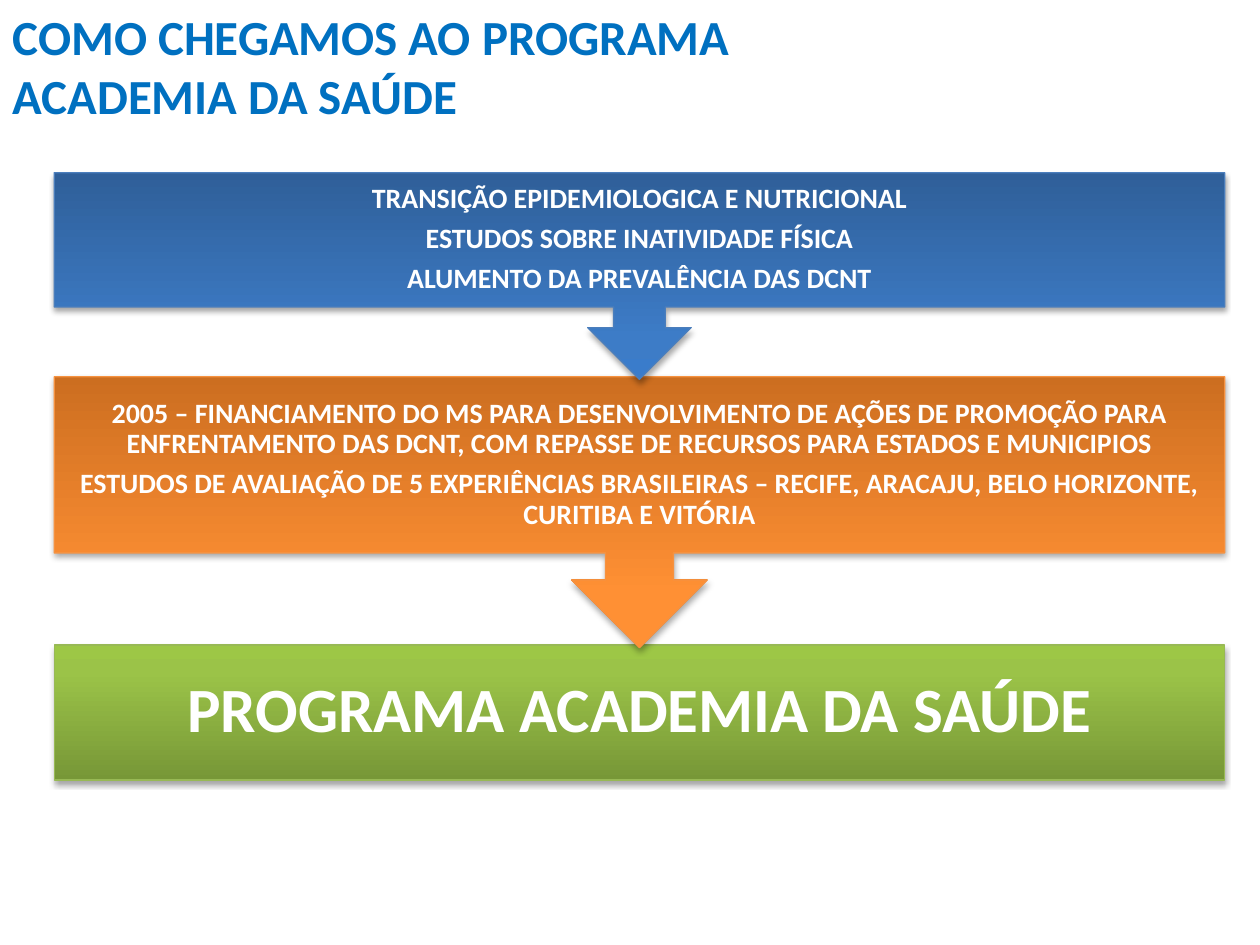
from copy import deepcopy
from dataclasses import dataclass

from lxml import etree
from pptx import Presentation
from pptx import util as u
from pptx.dml.color import RGBColor
from pptx.enum import shapes, text
from pptx.oxml.ns import qn

COLORS = {
    "title": "0070C0",
    "text": "FFFFFF",
    "shadow": "000000",
    "blue": ("2F5F99", "3D7CC7", "3A7CCB"),
    "blue_line": "4B7EBC",
    "orange": ("CC6E20", "FF9034", "FF9136"),
    "orange_line": "F69240",
    "green": ("779737", "9BC348", "9DC746"),
    "green_line": "98B955",
}
FONT = "Calibri"
GRADIENT_POSITIONS = (0, 0.8, 1)
CALLOUT_BODY = 0.65
LEFT, WIDTH = 4.3, 92.9


@dataclass(frozen=True)
class Stage:
    top: float
    height: float
    color: str
    lines: tuple[str, ...]
    size: int = 16
    inset: float = 0.12
    leads_on: bool = True


STAGES = (
    Stage(68.27, 14.27, "green", ("PROGRAMA ACADEMIA DA SAÚDE",), 36, 0.28, False),
    Stage(39.87, 28.67, "orange", (
        "2005 – FINANCIAMENTO DO MS PARA DESENVOLVIMENTO DE AÇÕES DE PROMOÇÃO PARA "
        "ENFRENTAMENTO DAS DCNT, COM REPASSE DE RECURSOS PARA ESTADOS E MUNICIPIOS",
        "ESTUDOS DE AVALIAÇÃO DE 5 EXPERIÊNCIAS BRASILEIRAS – RECIFE, ARACAJU, "
        "BELO HORIZONTE, CURITIBA E VITÓRIA",
    )),
    Stage(18.27, 21.87, "blue", (
        "TRANSIÇÃO EPIDEMIOLOGICA E NUTRICIONAL",
        "ESTUDOS SOBRE INATIVIDADE FÍSICA",
        "ALUMENTO DA PREVALÊNCIA DAS DCNT",
    )),
)

prs = Presentation()
prs.slide_width, prs.slide_height = u.Inches(10), u.Inches(7.5)


def area(left: float, top: float, width: float, height: float) -> tuple[int, ...]:
    across, down = prs.slide_width / 100, prs.slide_height / 100
    return (round(left * across), round(top * down),
            round(width * across), round(height * down))


def write_lines(frame, lines: tuple[str, ...], size: int, color: str, align) -> None:
    frame.word_wrap = True
    frame.text = "\n".join(lines)
    for paragraph in frame.paragraphs:
        paragraph.alignment = align
        font = paragraph.font
        font.name, font.size, font.bold = FONT, u.Pt(size), True
        font.color.rgb = RGBColor.from_string(color)


def fill_gradient(shape, colors: tuple[str, ...]) -> None:
    shape.fill.gradient()
    shape.fill.gradient_angle = 90
    stop_list = shape.element.spPr.find(".//" + qn("a:gsLst"))
    stop_list.append(deepcopy(stop_list[-1]))
    for stop, color, position in zip(shape.fill.gradient_stops, colors, GRADIENT_POSITIONS):
        stop.color.rgb = RGBColor.from_string(color)
        stop.position = position


def cast_shadow(shape) -> None:
    shape.shadow.inherit = False
    effects = shape.element.spPr.find(qn("a:effectLst"))
    shadow = etree.SubElement(effects, qn("a:outerShdw"), blurRad=str(u.Pt(3.1)),
                              dist=str(u.Pt(1.8)), dir="5400000", rotWithShape="0")
    tint = etree.SubElement(shadow, qn("a:srgbClr"), val=COLORS["shadow"])
    etree.SubElement(tint, qn("a:alpha"), val="35000")


def draw_stage(slide, stage: Stage) -> None:
    kind = shapes.MSO_SHAPE.UP_ARROW_CALLOUT if stage.leads_on else shapes.MSO_SHAPE.RECTANGLE
    panel = slide.shapes.add_shape(kind, *area(LEFT, stage.top, WIDTH, stage.height))
    panel.rotation = 180 if stage.leads_on else 0
    fill_gradient(panel, COLORS[stage.color])
    panel.line.color.rgb = RGBColor.from_string(COLORS[stage.color + "_line"])
    panel.line.width = u.Pt(0.75)
    cast_shadow(panel)

    body = stage.height * (CALLOUT_BODY if stage.leads_on else 1)
    frame = slide.shapes.add_textbox(*area(LEFT, stage.top, WIDTH, body)).text_frame
    frame.vertical_anchor = text.MSO_ANCHOR.MIDDLE
    frame.margin_left = frame.margin_right = u.Inches(stage.inset)
    frame.margin_top = frame.margin_bottom = u.Inches(stage.inset)
    write_lines(frame, stage.lines, stage.size, COLORS["text"], text.PP_ALIGN.CENTER)
    for paragraph in frame.paragraphs:
        paragraph.line_spacing = 0.9
        paragraph.space_after = u.Pt(0.35 * stage.size)


def main() -> None:
    slide = prs.slides.add_slide(prs.slide_layouts[5])
    title = slide.shapes.title
    title.left, title.top, title.width, title.height = area(0, 0, 88.6, 13.87)
    title.text_frame.auto_size = text.MSO_AUTO_SIZE.NONE
    title.text_frame.vertical_anchor = text.MSO_ANCHOR.TOP
    write_lines(title.text_frame, ("COMO CHEGAMOS AO PROGRAMA", "ACADEMIA DA SAÚDE"),
                28, COLORS["title"], text.PP_ALIGN.LEFT)
    for stage in STAGES:
        draw_stage(slide, stage)
    prs.save("out.pptx")


if __name__ == "__main__":
    main()
